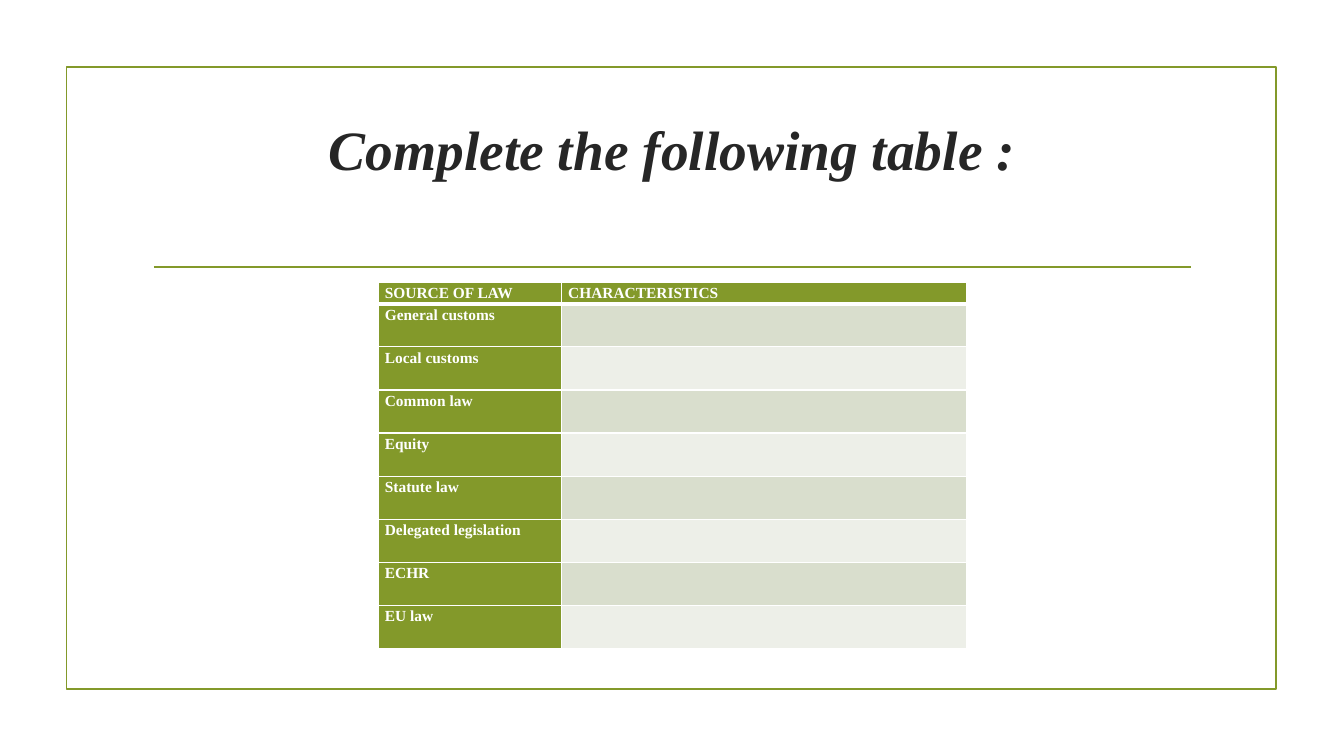
"""Build a slide with a two-column table of sources of law to complete."""
from lxml.etree import SubElement
from pptx import Presentation
from pptx.dml.color import RGBColor
from pptx.enum.shapes import MSO_CONNECTOR as Connector, MSO_SHAPE as Shape
from pptx.enum.text import MSO_ANCHOR as Anchor, PP_ALIGN as Align
from pptx.oxml import parse_xml
from pptx.oxml.ns import nsdecls, qn
from pptx.util import Pt

GREEN, WHITE, INK = "83992A", "FFFFFF", "262626"
BANDS = ["D9DECD", "EDEFE8"]
SOURCES = ["General customs", "Local customs", "Common law", "Equity",
           "Statute law", "Delegated legislation", "ECHR", "EU law"]


def paint(target, color):
    target.solid()
    target.fore_color.rgb = RGBColor.from_string(color)


def add_borders(cell, bottom_width):
    widths = {"lnL": 1, "lnR": 1, "lnT": 1, "lnB": bottom_width}
    for position, (side, width) in enumerate(widths.items()):
        border = parse_xml(
            f'<a:{side} {nsdecls("a")} w="{Pt(width)}"><a:solidFill>'
            f'<a:srgbClr val="{WHITE}"/></a:solidFill></a:{side}>')
        cell._tc.get_or_add_tcPr().insert(position, border)


deck = Presentation()
deck.slide_width, deck.slide_height = Pt(960), Pt(540)
slide = deck.slides.add_slide(deck.slide_layouts[5])

frame = slide.shapes.add_shape(Shape.RECTANGLE, Pt(47.5), Pt(48), Pt(864), Pt(444))
frame.shadow.inherit = False
frame.fill.background()
rule = slide.shapes.add_connector(Connector.STRAIGHT, Pt(110), Pt(190.6), Pt(850.4), Pt(190.6))
SubElement(rule._element.spPr, qn("a:effectLst"))
for outline in (frame.line, rule.line):
    paint(outline.fill, GREEN)
    outline.width = Pt(1.25)

title = slide.shapes.title
title.left, title.top, title.width, title.height = Pt(102.2), Pt(77), Pt(756), Pt(103)
title.text_frame.text = "Complete the following table :"
title.text_frame.vertical_anchor = Anchor.TOP
title.text_frame.margin_top = Pt(10.5)
heading = title.text_frame.paragraphs[0]
heading.alignment = Align.CENTER
heading.line_spacing = 0.9
heading.font.name = "Times New Roman"
heading.font.size = Pt(39.6)
heading.font.bold = heading.font.italic = True
paint(heading.font.fill, INK)

rows = [("SOURCE OF LAW", "CHARACTERISTICS")] + [(source, "") for source in SOURCES]
table = slide.shapes.add_table(len(rows), 2, Pt(270), Pt(201.8), Pt(420.4), Pt(261.6)).table
table.columns[0].width, table.columns[1].width = Pt(131), Pt(289.4)
for r, row in enumerate(rows):
    table.rows[r].height = Pt(30.8 if r else 15.2)
    for c, label in enumerate(row):
        cell = table.cell(r, c)
        cell.text = label
        cell.margin_left = cell.margin_right = Pt(4.9)
        cell.margin_top = cell.margin_bottom = 0
        paint(cell.fill, BANDS[(r - 1) % 2] if r and c else GREEN)
        add_borders(cell, 1 if r else 3)
        entry = cell.text_frame.paragraphs[0]
        entry.alignment = Align.JUSTIFY
        entry.line_spacing = 1.15
        entry.font.name = "Times New Roman"
        entry.font.size = Pt(11)
        entry.font.bold = True
        paint(entry.font.fill, WHITE)

deck.save("out.pptx")
